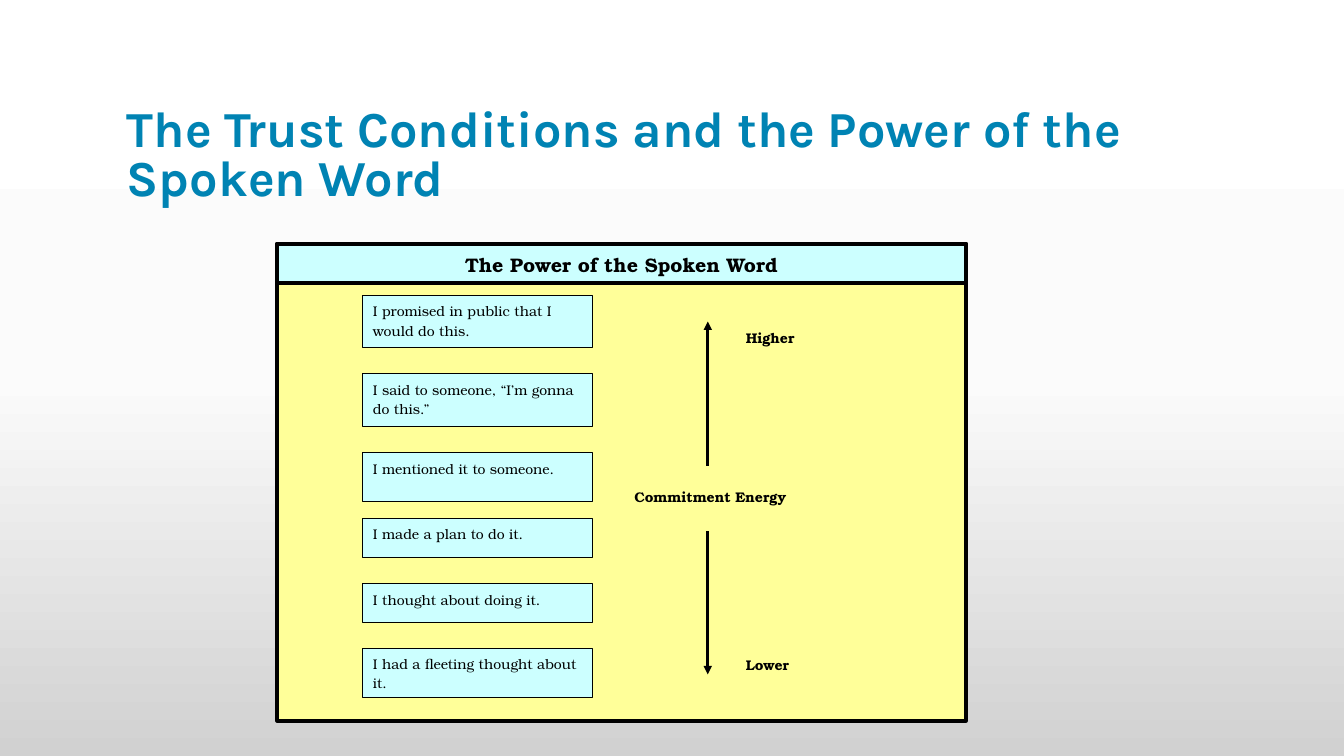
from copy import deepcopy
from dataclasses import dataclass

from lxml.etree import SubElement
from pptx import Presentation
from pptx.dml.color import RGBColor
from pptx.enum.shapes import MSO_CONNECTOR, MSO_SHAPE
from pptx.enum.text import MSO_ANCHOR, PP_ALIGN
from pptx.oxml.ns import qn
from pptx.util import Inches, Pt


@dataclass(frozen=True)
class Theme:
    title_font: str = "Karla"
    body_font: str = "TeX Gyre Bonum"
    title_color: str = "0083B3"
    ink: str = "000000"
    panel: str = "FFFF99"
    box: str = "CCFFFF"
    backdrop: tuple = ((0, "FFFFFF"), (50, "FBFBFB"), (100, "D1D1D1"))
    title_size: int = 36
    header_size: int = 14
    body_size: int = 10
    frame_line: float = 3
    arrow_line: float = 2
    box_line: float = 0.75


class SlideBuilder:
    def __init__(self, prs, theme):
        self.theme = theme
        self.s = prs.slides.add_slide(prs.slide_layouts[6])

    def background(self):
        fill = self.s.background.fill
        fill.gradient()
        fill.gradient_angle = 270
        stops = self.s.element.find(".//" + qn("a:gsLst"))
        stops.insert(1, deepcopy(stops[0]))
        for stop, (percent, color) in zip(fill.gradient_stops, self.theme.backdrop):
            stop.position = percent / 100
            stop.color.rgb = RGBColor.from_string(color)

    def set_text(self, tf, text, size, font, color, bold, align, spacing):
        tf.word_wrap = True
        p = tf.paragraphs[0]
        p.text = text
        p.alignment = align
        p.line_spacing = spacing
        p.font.size = Pt(size)
        p.font.name = font
        p.font.bold = bold
        p.font.color.rgb = RGBColor.from_string(color)
        return p

    def title(self, text, left, top, width, height):
        tf = self.s.shapes.add_textbox(*map(Inches, (left, top, width, height))).text_frame
        tf.vertical_anchor = MSO_ANCHOR.BOTTOM
        self.set_text(tf, text, self.theme.title_size, self.theme.title_font,
                      self.theme.title_color, True, PP_ALIGN.LEFT, 0.8)

    def box(self, left, top, width, height, fill, line=None, text=None,
            size=None, bold=False, align=PP_ALIGN.LEFT):
        sp = self.s.shapes.add_shape(
            MSO_SHAPE.RECTANGLE, *map(Inches, (left, top, width, height)))
        sp.shadow.inherit = False
        sp.fill.solid()
        sp.fill.fore_color.rgb = RGBColor.from_string(fill)
        if line:
            sp.line.color.rgb = RGBColor.from_string(self.theme.ink)
            sp.line.width = Pt(line)
        else:
            sp.line.fill.background()
        if text:
            tf = sp.text_frame
            tf.vertical_anchor = MSO_ANCHOR.TOP
            p = self.set_text(tf, text, size or self.theme.body_size,
                              self.theme.body_font, self.theme.ink, bold, align, 1.15)
            p.space_after = Pt(10)

    def arrow(self, x, start, end):
        cxn = self.s.shapes.add_connector(
            MSO_CONNECTOR.STRAIGHT, *map(Inches, (x, start, x, end)))
        cxn.line.color.rgb = RGBColor.from_string(self.theme.ink)
        cxn.line.width = Pt(self.theme.arrow_line)
        sp_pr = cxn._element.spPr
        SubElement(sp_pr.find(qn("a:ln")), qn("a:tailEnd"), type="triangle")
        SubElement(sp_pr, qn("a:effectLst"))


STATEMENTS = [  # top, height, wording
    (2.93, 0.52, "I promised in public that I would do this."),
    (3.71, 0.52, "I said to someone, “I’m gonna do this.”"),
    (4.49, 0.49, "I mentioned it to someone."),
    (5.14, 0.39, "I made a plan to do it."),
    (5.79, 0.39, "I thought about doing it."),
    (6.43, 0.49, "I had a fleeting thought about it."),
]


def main():
    prs = Presentation()
    prs.slide_width, prs.slide_height = Inches(13.33), Inches(7.5)
    theme = Theme()
    b = SlideBuilder(prs, theme)

    # Backdrop and title
    b.background()
    b.title("The Trust Conditions and the Power of the Spoken Word",
            1.16, 0.92, 11.08, 1.17)

    # Panel
    b.box(2.75, 2.42, 6.83, 4.73, theme.panel, theme.frame_line)

    # Ladder of statements
    for top, height, text in STATEMENTS:
        b.box(3.6, top, 2.28, height, theme.box, theme.box_line, text)

    # Commitment scale
    b.box(6.12, 4.77, 1.85, 0.52, theme.panel, text="Commitment Energy",
          bold=True, align=PP_ALIGN.CENTER)
    for top, text in ((3.19, "Higher"), (6.44, "Lower")):
        b.box(7.3, top, 1.14, 0.39, theme.panel, text=text, bold=True)
    for start, end in ((4.62, 3.19), (5.27, 6.69)):
        b.arrow(7.02, start, end)

    # Panel header
    b.box(2.75, 2.42, 6.83, 0.39, theme.box, theme.frame_line,
          "The Power of the Spoken Word", theme.header_size, True, PP_ALIGN.CENTER)

    prs.save("out.pptx")


if __name__ == "__main__":
    main()
